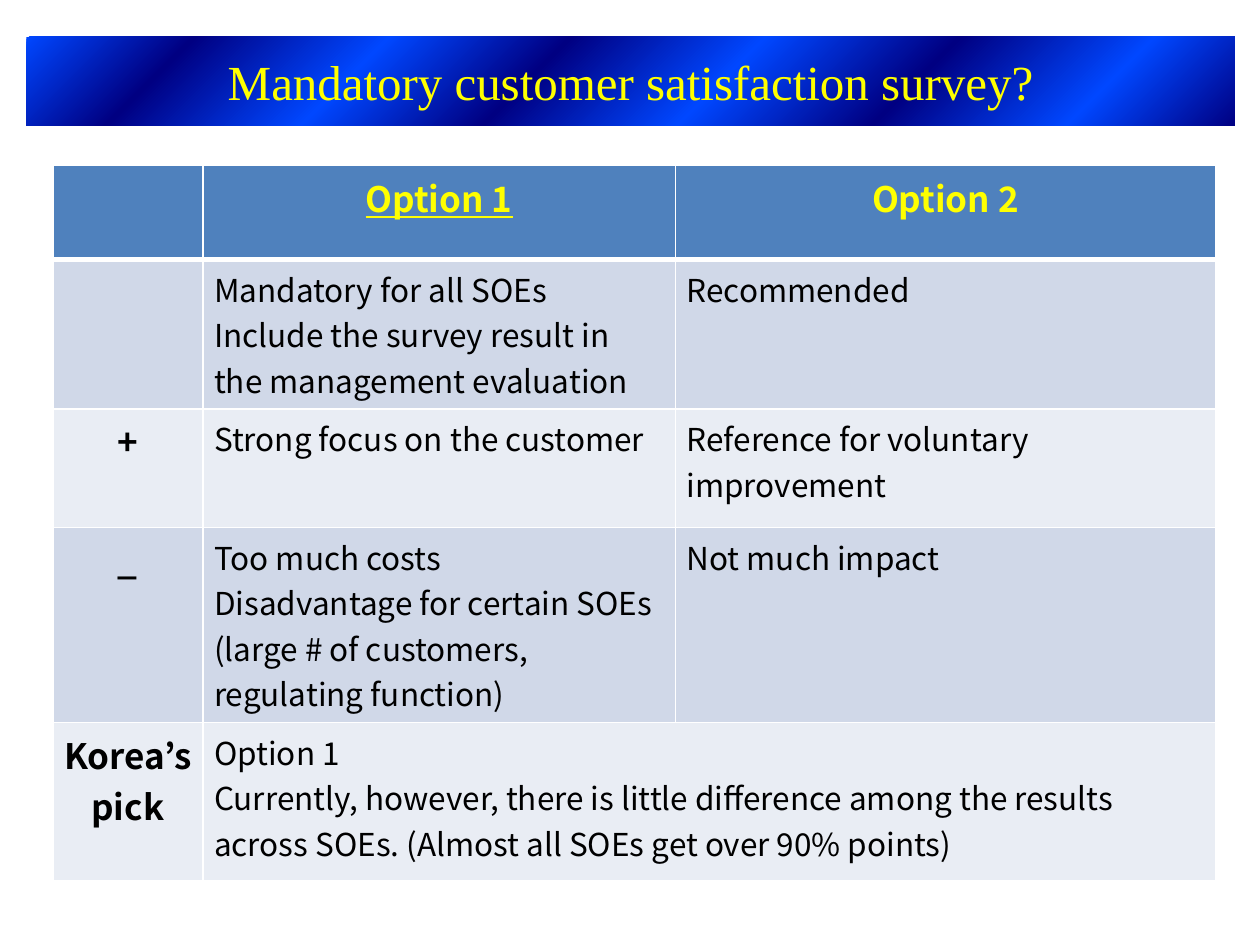
from lxml import etree
from pptx import Presentation
from pptx.dml.color import RGBColor
from pptx.enum.shapes import MSO_SHAPE as Shape
from pptx.enum.text import MSO_ANCHOR as Anchor, PP_ALIGN as Align
from pptx.oxml import parse_xml
from pptx.oxml.ns import nsdecls, qn
from pptx.util import Inches, Pt

TITLE_FONT = "Times New Roman"
TABLE_FONT = "Noto Sans CJK KR"
YELLOW, BLACK, WHITE = "FFFF00", "000000", "FFFFFF"
NAVY, BRIGHT_BLUE = "000082", "0047FF"
HEADER_FILL, DARK_BAND, LIGHT_BAND = "4F81BD", "D0D8E8", "E9EDF4"
BAND_STOPS = [0, 13, 28, 43, 58, 72, 87, 100]

COLUMN_WIDTHS = [1.19, 3.75, 4.29]
ROW_HEIGHTS = [0.75, 1.14, 0.94, 1.3, 1.26]
ROWS = [
    ["", "Option 1", "Option 2"],
    ["", "Mandatory for all SOEs\nInclude the survey result in the management evaluation",
     "Recommended"],
    ["+", "Strong focus on the customer", "Reference for voluntary improvement"],
    ["_", "Too much costs\nDisadvantage for certain SOEs\n"
     "(large # of customers, regulating function)", "Not much impact"],
    ["Korea’s pick", "Option 1\nCurrently, however, there is little difference among the results "
     "across SOEs. (Almost all SOEs get over 90% points)", ""],
]


def rgb(value):
    return RGBColor.from_string(value)


def style_text(text_frame, font_name, size, color, align, bold=False):
    for paragraph in text_frame.paragraphs:
        paragraph.alignment = align
        for run in paragraph.runs:
            font = run.font
            font.name, font.size, font.bold = font_name, Pt(size), bold
            font.color.rgb = rgb(color)


def fill_with_bands(shape):
    """Alternate navy and bright blue outwards from the bottom right corner."""
    stops = "".join(
        f'<a:gs pos="{stop * 1000}"><a:srgbClr val="{(NAVY, BRIGHT_BLUE)[index % 2]}"/></a:gs>'
        for index, stop in enumerate(BAND_STOPS))
    gradient = parse_xml(
        f'<a:gradFill {nsdecls("a")} rotWithShape="1"><a:gsLst>{stops}</a:gsLst>'
        '<a:path path="circle"><a:fillToRect l="100000" t="100000"/></a:path></a:gradFill>')
    shape._element.spPr.find(qn("a:prstGeom")).addnext(gradient)


def add_title_banner(slide, left, top, width, height):
    banner = slide.shapes.add_shape(Shape.RECTANGLE, left, top, width, height)
    banner.shadow.inherit = False
    banner.line.fill.background()
    fill_with_bands(banner)
    title = banner.text_frame
    title.text = "Mandatory customer satisfaction survey?"
    title.word_wrap = True
    title.vertical_anchor = Anchor.MIDDLE
    style_text(title, TITLE_FONT, 28, YELLOW, Align.CENTER)


def set_borders(cell, is_header):
    properties = cell._tc.get_or_add_tcPr()
    for side in "LRTB":
        weight = 3 if is_header and side == "B" or False else 1
        line = etree.SubElement(properties, qn(f"a:ln{side}"), w=str(Pt(weight)))
        solid = etree.SubElement(line, qn("a:solidFill"))
        etree.SubElement(solid, qn("a:srgbClr"), val=WHITE)


def fill_cell(cell, text, row, column):
    is_header = row == 0
    set_borders(cell, is_header)
    cell.fill.solid()
    cell.fill.fore_color.rgb = rgb(
        HEADER_FILL if is_header else DARK_BAND if row % 2 else LIGHT_BAND)
    cell.margin_left = cell.margin_right = Inches(0.09)
    cell.margin_top = cell.margin_bottom = Inches(0.05)
    if not text:
        return
    cell.text_frame.text = text
    is_label = is_header or column == 0
    style_text(cell.text_frame, TABLE_FONT, 20 if is_label else 18,
               YELLOW if is_header else BLACK,
               Align.CENTER if is_label else Align.LEFT, bold=is_label)


def add_options_table(slide, left, top, width, height):
    options = slide.shapes.add_table(
        len(ROWS), len(COLUMN_WIDTHS), left, top, width, height).table
    for column, share in zip(options.columns, COLUMN_WIDTHS):
        column.width = int(width * share / sum(COLUMN_WIDTHS))
    for row, share in zip(options.rows, ROW_HEIGHTS):
        row.height = int(height * share / sum(ROW_HEIGHTS))
    for row, texts in enumerate(ROWS):
        for column, text in enumerate(texts):
            fill_cell(options.cell(row, column), text, row, column)
    options.cell(0, 1).text_frame.paragraphs[0].runs[0].font.underline = True
    pick_row = len(ROWS) - 1
    options.cell(pick_row, 1).merge(options.cell(pick_row, 2))


def main():
    deck = Presentation()
    deck.slide_width, deck.slide_height = Inches(10), Inches(7.5)
    slide = deck.slides.add_slide(deck.slide_layouts[6])
    add_title_banner(slide, Inches(0.21), Inches(0.29), Inches(9.59), Inches(0.71))
    add_options_table(slide, Inches(0.42), Inches(1.31), Inches(9.23), Inches(5.39))
    deck.save("out.pptx")


if __name__ == "__main__":
    main()
